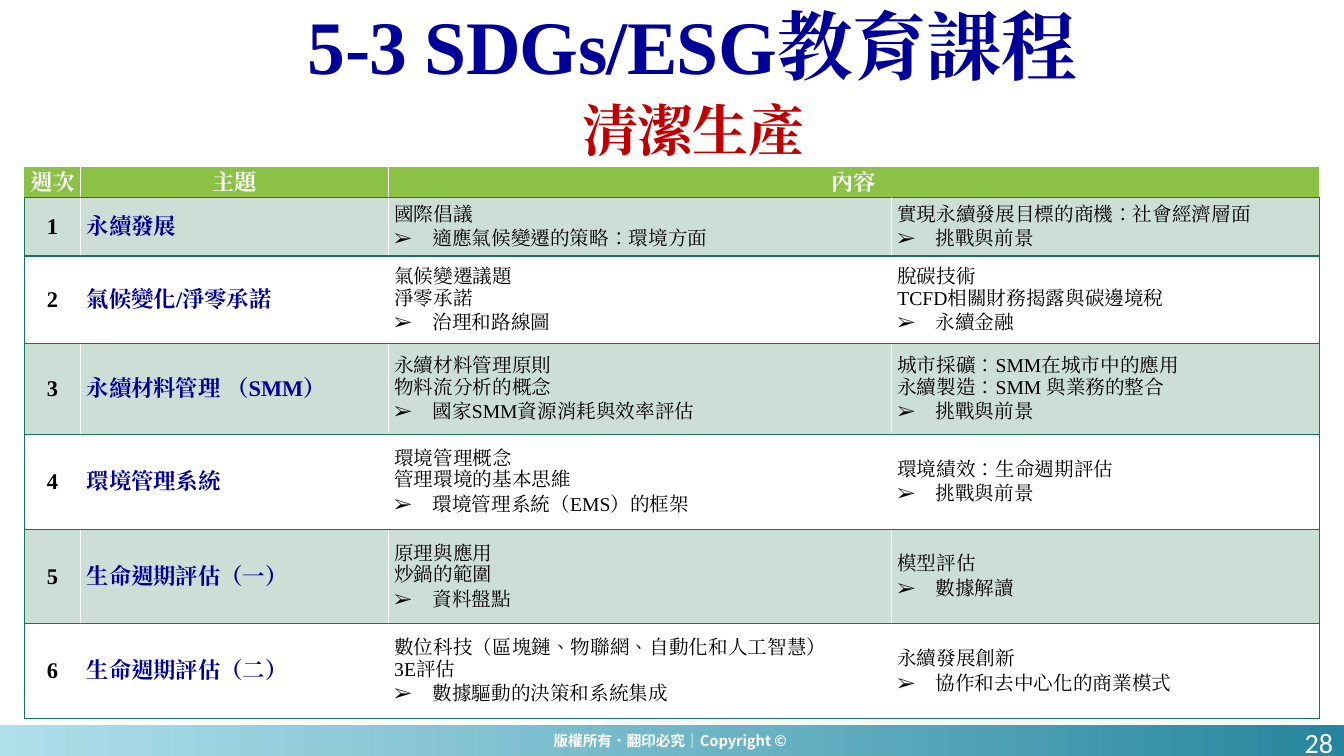
import pptx
import pptx.dml.color
import pptx.enum.shapes
import pptx.enum.text
import pptx.oxml
import pptx.oxml.ns
import pptx.util
from lxml import etree
from pptx.util import Inches

COLORS = {
    "white": "FFFFFF", "black": "000000", "navy": "000099", "red": "C00000",
    "header": "8BC145", "band": "CDDED6", "rule": "16745A", "wave": "F2F2F2",
    "deep": "26859D", "teal": "6BB3C4", "sky": "AFDFEB",
}
SERIF = "Times New Roman"
SANS = "Noto Sans CJK SC"
ALIGN = pptx.enum.text.PP_ALIGN
ANCHOR = pptx.enum.text.MSO_ANCHOR

COLUMN_WIDTHS = [0.56, 3.05, 4.99, 4.25]
ROW_HEIGHTS = [0.3, 0.58, 0.87, 0.9, 0.94, 0.94, 0.94]
COURSES = [
    ("永續發展",
     ["國際倡議", "適應氣候變遷的策略：環境方面"],
     ["實現永續發展目標的商機：社會經濟層面", "挑戰與前景"]),
    ("氣候變化/淨零承諾",
     ["氣候變遷議題", "淨零承諾", "治理和路線圖"],
     ["脫碳技術", "TCFD相關財務揭露與碳邊境稅", "永續金融"]),
    ("永續材料管理 （SMM）",
     ["永續材料管理原則", "物料流分析的概念", "國家SMM資源消耗與效率評估"],
     ["城市採礦：SMM在城市中的應用", "永續製造：SMM 與業務的整合", "挑戰與前景"]),
    ("環境管理系統",
     ["環境管理概念", "管理環境的基本思維", "環境管理系統（EMS）的框架"],
     ["環境績效：生命週期評估", "挑戰與前景"]),
    ("生命週期評估（一）",
     ["原理與應用", "炒鍋的範圍", "資料盤點"],
     ["模型評估", "數據解讀"]),
    ("生命週期評估（二）",
     ["數位科技（區塊鏈、物聯網、自動化和人工智慧）", "3E評估", "數據驅動的決策和系統集成"],
     ["永續發展創新", "協作和去中心化的商業模式"]),
]
WAVE_START = (13.32, 2.87)
WAVE_CURVES = [
    ((12.64, 2.93), (12.23, 3.35), (12.1, 3.58)),
    ((11.9, 3.93), (11.56, 4.15), (10.95, 4.09)),
    ((10.34, 4.04), (9.98, 4.17), (9.61, 4.78)),
    ((9.27, 5.31), (8.92, 5.18), (7.52, 5.44)),
    ((6.13, 5.7), (6.51, 6.41), (6.23, 7.14)),
    ((6.17, 7.28), (6.08, 7.4), (5.97, 7.5)),
]


def rgb(name):
    return pptx.dml.color.RGBColor.from_string(COLORS[name])


def add_child(parent, tag, **attributes):
    child = etree.SubElement(parent, pptx.oxml.ns.qn(tag))
    for key, value in attributes.items():
        child.set(key, str(value))
    return child


def add_run(paragraph, text, size, color, font=SERIF, bold=False, spacing=0):
    run = paragraph.add_run()
    run.text = text
    run.font.size = pptx.util.Pt(size)
    run.font.bold = bold
    run.font.name = font
    run.font.color.rgb = rgb(color)
    properties = run._r.get_or_add_rPr()
    properties.set("lang", "zh-TW")
    if spacing:
        properties.set("spc", str(int(spacing * 100)))
    add_child(properties, "a:ea", typeface=font)


def add_label(slide, box, text, size, color, align=ALIGN.CENTER,
              anchor=ANCHOR.TOP, line_spacing=None, **style):
    frame = slide.shapes.add_textbox(*map(Inches, box)).text_frame
    frame.word_wrap = True
    frame.vertical_anchor = anchor
    paragraph = frame.paragraphs[0]
    paragraph.alignment = align
    paragraph.line_spacing = line_spacing
    add_run(paragraph, text, size, color, **style)


def curve_points(start, curves, steps=12):
    points = []
    for first, second, end in curves:
        for step in range(1, steps + 1):
            t = step / steps
            points.append(tuple(
                (1 - t) ** 3 * a + 3 * (1 - t) ** 2 * t * b
                + 3 * (1 - t) * t ** 2 * c + t ** 3 * d
                for a, b, c, d in zip(start, first, second, end)))
        start = end
    return points


def add_wave(slide):
    builder = slide.shapes.build_freeform(13.32, 7.5, scale=Inches(1))
    builder.add_line_segments([WAVE_START] + curve_points(WAVE_START, WAVE_CURVES))
    wave = builder.convert_to_shape()
    wave.shadow.inherit = False
    wave.line.fill.background()
    wave.fill.solid()
    wave.fill.fore_color.rgb = rgb("wave")
    color = wave._element.spPr.find(".//" + pptx.oxml.ns.qn("a:srgbClr"))
    add_child(color, "a:alpha", val=55000)


def add_footer_bar(slide):
    bar = slide.shapes.add_shape(
        pptx.enum.shapes.MSO_SHAPE.RECTANGLE,
        Inches(0), Inches(7.19), Inches(13.33), Inches(0.31))
    bar.shadow.inherit = False
    bar.line.fill.background()
    bar.fill.gradient()
    gradient = bar._element.spPr.find(pptx.oxml.ns.qn("a:gradFill"))
    for child in list(gradient):
        gradient.remove(child)
    stops = add_child(gradient, "a:gsLst")
    for position, color in ((0, "deep"), (45, "teal"), (100, "sky")):
        stop = add_child(stops, "a:gs", pos=position * 1000)
        add_child(stop, "a:srgbClr", val=COLORS[color])
    add_child(gradient, "a:lin", ang=180 * 60000, scaled=0)


def format_cell(cell, fill, left, top, right, bottom, margin=0.06):
    cell.vertical_anchor = ANCHOR.MIDDLE
    cell.margin_left = cell.margin_right = Inches(margin)
    cell.margin_top = cell.margin_bottom = 0
    properties = cell._tc.get_or_add_tcPr()
    for side, color in zip("LRTB", (left, right, top, bottom)):
        line = add_child(properties, "a:ln" + side, w=pptx.util.Pt(1))
        if color:
            add_child(add_child(line, "a:solidFill"), "a:srgbClr", val=COLORS[color])
        else:
            add_child(line, "a:noFill")
    cell.fill.solid()
    cell.fill.fore_color.rgb = rgb(fill)


def write_heading(cell, text, color, align):
    paragraph = cell.text_frame.paragraphs[0]
    paragraph.alignment = align
    add_run(paragraph, text, 16, color, bold=True)


def write_topics(cell, topics):
    frame = cell.text_frame
    for index, topic in enumerate(topics):
        paragraph = frame.add_paragraph() if index else frame.paragraphs[0]
        if index == len(topics) - 1:
            paragraph.space_before = paragraph.space_after = pptx.util.Pt(2)
            properties = paragraph._p.get_or_add_pPr()
            properties.set("marL", str(Inches(0.38)))
            properties.set("indent", str(-Inches(0.38)))
            add_child(properties, "a:buFont", typeface="Wingdings")
            properties[-1].set("typeface", SERIF)
            add_child(properties, "a:buChar", char="➢")
        add_run(paragraph, topic, 14, "black")


def add_course_table(slide):
    table = slide.shapes.add_table(
        len(ROW_HEIGHTS), len(COLUMN_WIDTHS),
        Inches(0.24), Inches(1.66), Inches(12.85), Inches(5.48)).table
    table.first_row = table.horz_banding = False
    for column, width in zip(table.columns, COLUMN_WIDTHS):
        column.width = Inches(width)
    for row, height in zip(table.rows, ROW_HEIGHTS):
        row.height = Inches(height)
    last = len(COLUMN_WIDTHS) - 1
    for row in range(len(ROW_HEIGHTS)):
        edge = "rule" if row else None
        fill = ("white", "band")[row % 2] if row else "header"
        for column in range(last + 1):
            format_cell(
                table.cell(row, column), fill,
                left="white" if column else edge, top=edge,
                right="white" if column < last else edge, bottom="rule",
                margin=0.06 if column else 0.04)
    table.cell(0, 2).merge(table.cell(0, 3))
    for column, title in enumerate(("週次", "主題", "內容")):
        write_heading(table.cell(0, column), title, "white", ALIGN.CENTER)
    for week, (subject, *topic_lists) in enumerate(COURSES, start=1):
        write_heading(table.cell(week, 0), str(week), "black", ALIGN.CENTER)
        write_heading(table.cell(week, 1), subject, "navy", ALIGN.LEFT)
        for column, topics in enumerate(topic_lists, start=2):
            write_topics(table.cell(week, column), topics)


def main():
    presentation = pptx.Presentation()
    presentation.slide_width = Inches(13.33)
    presentation.slide_height = Inches(7.5)
    slide = presentation.slides.add_slide(presentation.slide_layouts[6])
    add_wave(slide)
    add_footer_bar(slide)
    add_label(slide, (4.68, 7.21, 3.97, 0.28), "版權所有．翻印必究｜Copyright © ",
              10.5, "white", font=SANS, bold=True)
    add_course_table(slide)
    add_label(slide, (3.54, 0.9, 6.67, 0.77), "清潔生產", 40, "red",
              bold=True, spacing=-0.5)
    add_label(slide, (10.32, 7.15, 3, 0.4), "28", 20, "white",
              align=ALIGN.RIGHT, font="Calibri")
    add_label(slide, (0.69, 0, 12.36, 0.94), "5-3 SDGs/ESG教育課程", 54, "navy",
              anchor=ANCHOR.BOTTOM, line_spacing=0.85, bold=True, spacing=-0.5)
    presentation.save("out.pptx")


if __name__ == "__main__":
    main()
